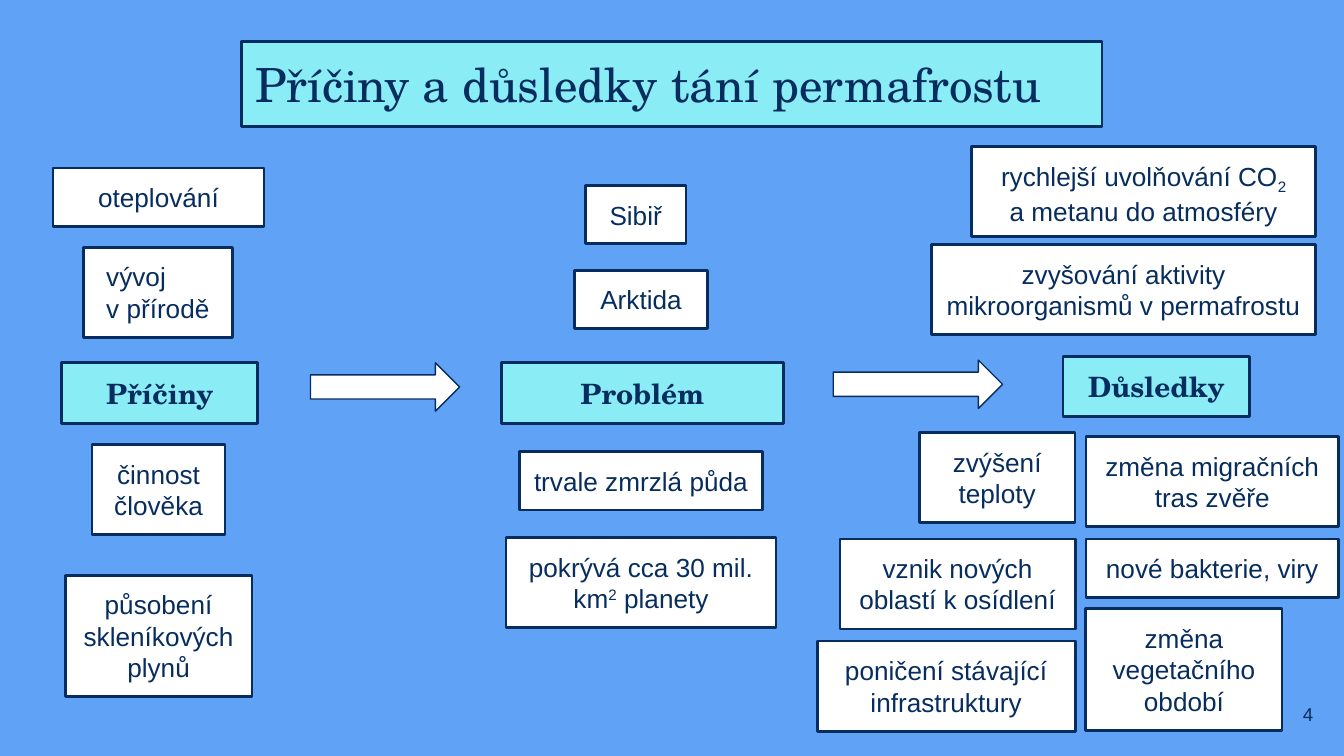
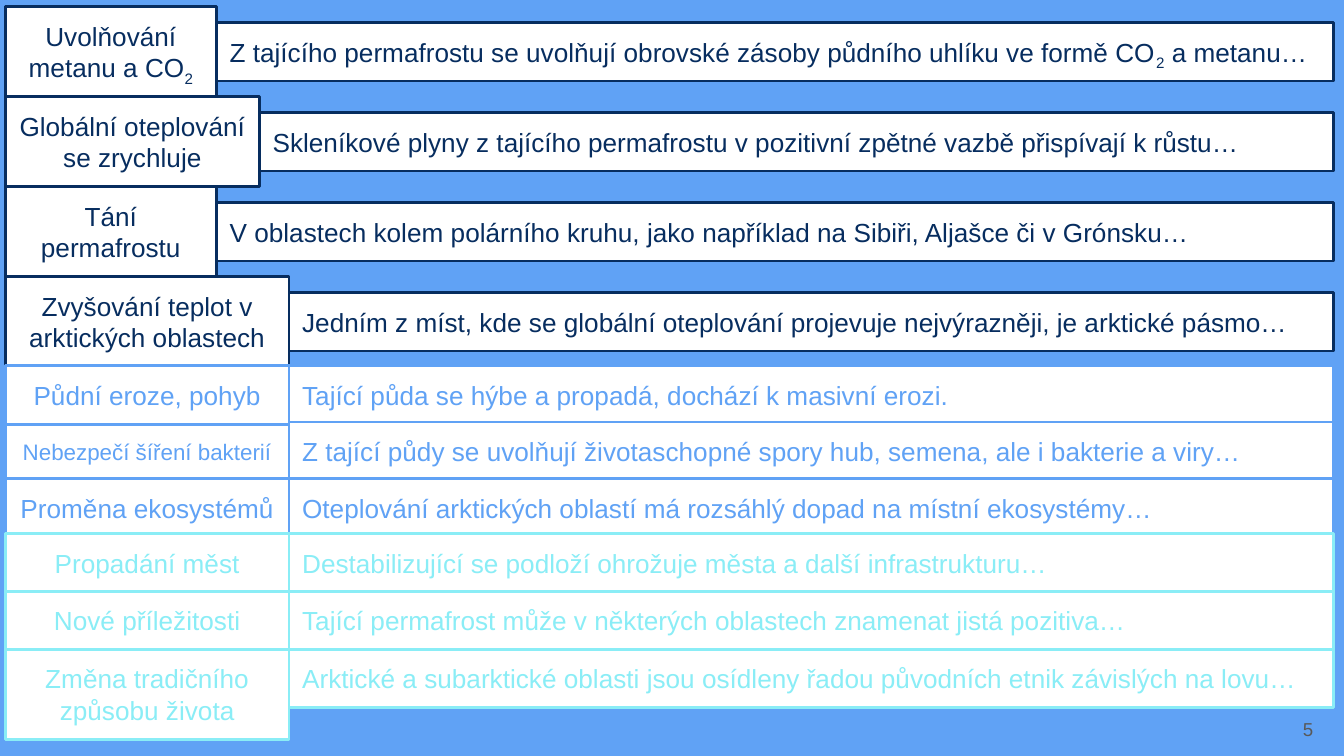
"""Builds two slides on the causes and consequences of melting permafrost."""
from pptx import Presentation
from pptx.dml.color import RGBColor
from pptx.enum.shapes import MSO_SHAPE
from pptx.enum.text import MSO_ANCHOR, MSO_AUTO_SIZE, PP_ALIGN
from pptx.util import Inches, Pt

WIDTH, HEIGHT = 10, 5.625
BLUE, CYAN, NAVY, WHITE, GREY = "60A2F5", "8AEDF6", "072D5F", "FFFFFF", "595959"
BODY, SERIF = "Arial", "TeX Gyre Schola"
BASELINES = {"_": "-25000", "^": "30000"}
LEFT, MIDDLE, RIGHT = 0, 0.5, 1

TITLE = "Příčiny a důsledky tání permafrostu"
HEADINGS = [
    ("Příčiny", 0.46, 2.7, 1.46),
    ("Problém", 3.73, 2.7, 2.1),
    ("Důsledky", 7.91, 2.65, 1.39),
]
ARROWS = [(2.31, 2.7, 1.11), (6.2, 2.68, 1.26)]
NATURE = ("vývoj\nv přírodě", 0.62, 1.84, 1.11)

# Each column: guide x, alignment to it, then (text, top, width, lines).
COLUMNS = [
    (1.18, MIDDLE, [
        ("oteplování", 1.25, 1.57, 1),
        ("činnost člověka", 3.31, 0.99, 2),
        ("působení skleníkových plynů", 4.28, 1.39, 3),
    ]),
    (4.73, MIDDLE, [("Sibiř", 1.38, 0.75, 1)]),
    (4.77, MIDDLE, [
        ("Arktida", 2.01, 0.99, 1),
        ("trvale zmrzlá půda", 3.36, 1.81, 1),
        ("pokrývá cca 30 mil. km^2 planety", 4, 2.01, 2),
    ]),
    (9.79, RIGHT, [
        ("rychlejší uvolňování CO_2\na metanu do atmosféry", 1.09, 2.56, 2),
        ("zvyšování aktivity mikroorganismů v permafrostu", 1.82, 2.86, 2),
    ]),
    (8, RIGHT, [
        ("zvýšení teploty", 3.22, 1.16, 2),
        ("vznik nových oblastí k osídlení", 4.01, 1.75, 2),
        ("poničení stávající infrastruktury", 4.77, 1.92, 2),
    ]),
    (8.08, LEFT, [
        ("změna migračních tras zvěře", 3.25, 1.88, 2),
        ("nové bakterie, viry", 4.01, 1.88, 1),
        ("změna vegetačního období", 4.53, 1.46, 3),
    ]),
]

# Each group: colour, top, pitch, lines per row, then
# (label, label width, label lines, label size, detail).
GROUPS = [
    (NAVY, 0.05, 0.67, 2, [
        ("Uvolňování metanu a CO_2", 1.57, 2, 14,
         "Z tajícího permafrostu se uvolňují obrovské zásoby půdního uhlíku ve formě CO_2 a metanu…"),
        ("Globální oteplování se zrychluje", 1.89, 2, 14,
         "Skleníkové plyny z tajícího permafrostu v pozitivní zpětné vazbě přispívají k růstu…"),
        ("Tání permafrostu", 1.57, 2, 14,
         "V oblastech kolem polárního kruhu, jako například na Sibiři, Aljašce či v Grónsku…"),
        ("Zvyšování teplot v arktických oblastech", 2.11, 2, 14,
         "Jedním z míst, kde se globální oteplování projevuje nejvýrazněji, je arktické pásmo…"),
    ]),
    (BLUE, 2.72, 0.42, 1, [
        ("Půdní eroze, pohyb", 2.11, 1, 14,
         "Tající půda se hýbe a propadá, dochází k masivní erozi."),
        ("Nebezpečí šíření bakterií", 2.11, 1, 12,
         "Z tající půdy se uvolňují životaschopné spory hub, semena, ale i bakterie a viry…"),
        ("Proměna ekosystémů", 2.11, 1, 14,
         "Oteplování arktických oblastí má rozsáhlý dopad na místní ekosystémy…"),
    ]),
    (CYAN, 3.97, 0.43, 1, [
        ("Propadání měst", 2.11, 1, 14,
         "Destabilizující se podloží ohrožuje města a další infrastrukturu…"),
        ("Nové příležitosti", 2.11, 1, 14,
         "Tající permafrost může v některých oblastech znamenat jistá pozitiva…"),
        ("Změna tradičního způsobu života", 2.11, 2, 14,
         "Arktické a subarktické oblasti jsou osídleny řadou původních etnik závislých na lovu…"),
    ]),
]
LABEL_LEFT, DETAIL_RIGHT = 0.04, 9.92


def rgb(value):
    return RGBColor.from_string(value)


def box_height(lines, size=14):
    return 0.2 + lines * size * 0.0168


def write(tf, text, size, color, font=BODY, bold=False, align=PP_ALIGN.CENTER, inset=0.1):
    tf.word_wrap = True
    tf.margin_left = tf.margin_right = Inches(inset)
    tf.margin_top = tf.margin_bottom = Inches(0.1)
    p = tf.paragraphs[0]
    p.alignment = align
    for i, line in enumerate(text.split("\n")):
        if i:
            p.add_line_break()
        mark = next((m for m in BASELINES if m in line), None)
        head, tail = line.split(mark) if mark else (line, "")
        for part, base in ((head, None), (tail[:1], BASELINES.get(mark)), (tail[1:], None)):
            if part:
                r = p.add_run()
                r.text = part
                r.font.name, r.font.size, r.font.bold = font, Pt(size), bold
                r.font.color.rgb = rgb(color)
                if base:
                    r.font._element.set("baseline", base)


def add_shape(s, left, top, width, height, fill=WHITE, line=NAVY, weight=1.5,
              kind=MSO_SHAPE.RECTANGLE):
    sp = s.shapes.add_shape(kind, *map(Inches, (left, top, width, height)))
    sp.shadow.inherit = False
    sp.fill.solid()
    sp.fill.fore_color.rgb = rgb(fill)
    sp.line.color.rgb = rgb(line)
    sp.line.width = Pt(weight)
    return sp


def add_box(s, text, left, top, width, height, fill=WHITE, color=NAVY, line=NAVY,
            size=14, grow=True, **style):
    tf = add_shape(s, left, top, width, height, fill, line).text_frame
    tf.vertical_anchor = MSO_ANCHOR.TOP
    write(tf, text, size, color, **style)
    if grow:
        tf.auto_size = MSO_AUTO_SIZE.SHAPE_TO_FIT_TEXT


def add_slide(prs, number, number_top, number_color):
    s = prs.slides.add_slide(prs.slide_layouts[6])
    s.background.fill.solid()
    s.background.fill.fore_color.rgb = rgb(BLUE)
    tf = s.shapes.add_textbox(*map(Inches, (9.27, number_top, 0.6, 0.43))).text_frame
    tf.vertical_anchor = MSO_ANCHOR.MIDDLE
    write(tf, number, 10, number_color, align=PP_ALIGN.RIGHT)
    return s


def build_causes(prs):
    s = add_slide(prs, "4", 5.1, NAVY)
    add_box(s, TITLE, 1.8, 0.31, 6.4, 0.63, CYAN, size=25.2, font=SERIF,
            align=PP_ALIGN.LEFT, grow=False)
    for text, left, top, width in HEADINGS:
        add_box(s, text, left, top, width, 0.45, CYAN, size=15, font=SERIF, bold=True)
    for left, top, width in ARROWS:
        add_shape(s, left, top, width, 0.36, weight=0.75, kind=MSO_SHAPE.RIGHT_ARROW)
    add_box(s, *NATURE, box_height(2), align=PP_ALIGN.LEFT, inset=0.17)
    for guide, share, items in COLUMNS:
        for text, top, width, lines in items:
            add_box(s, text, guide - share * width, top, width, box_height(lines))


def build_effects(prs):
    s = add_slide(prs, "5", 5.21, GREY)
    for color, start, pitch, row_lines, rows in GROUPS:
        row_height, detail_height = box_height(row_lines), box_height(1)
        for i, (label, width, lines, size, detail) in enumerate(rows):
            top = start + i * pitch
            height = box_height(lines, size)
            add_box(s, label, LABEL_LEFT, top + max(0, (row_height - height) / 2),
                    width, height, color=color, line=color, size=size)
            left = LABEL_LEFT + width
            add_box(s, detail, left, top + (row_height - detail_height) / 2,
                    DETAIL_RIGHT - left, detail_height, color=color, line=color,
                    align=PP_ALIGN.LEFT)


def main():
    prs = Presentation()
    prs.slide_width, prs.slide_height = Inches(WIDTH), Inches(HEIGHT)
    build_causes(prs)
    build_effects(prs)
    prs.save("out.pptx")


if __name__ == "__main__":
    main()
